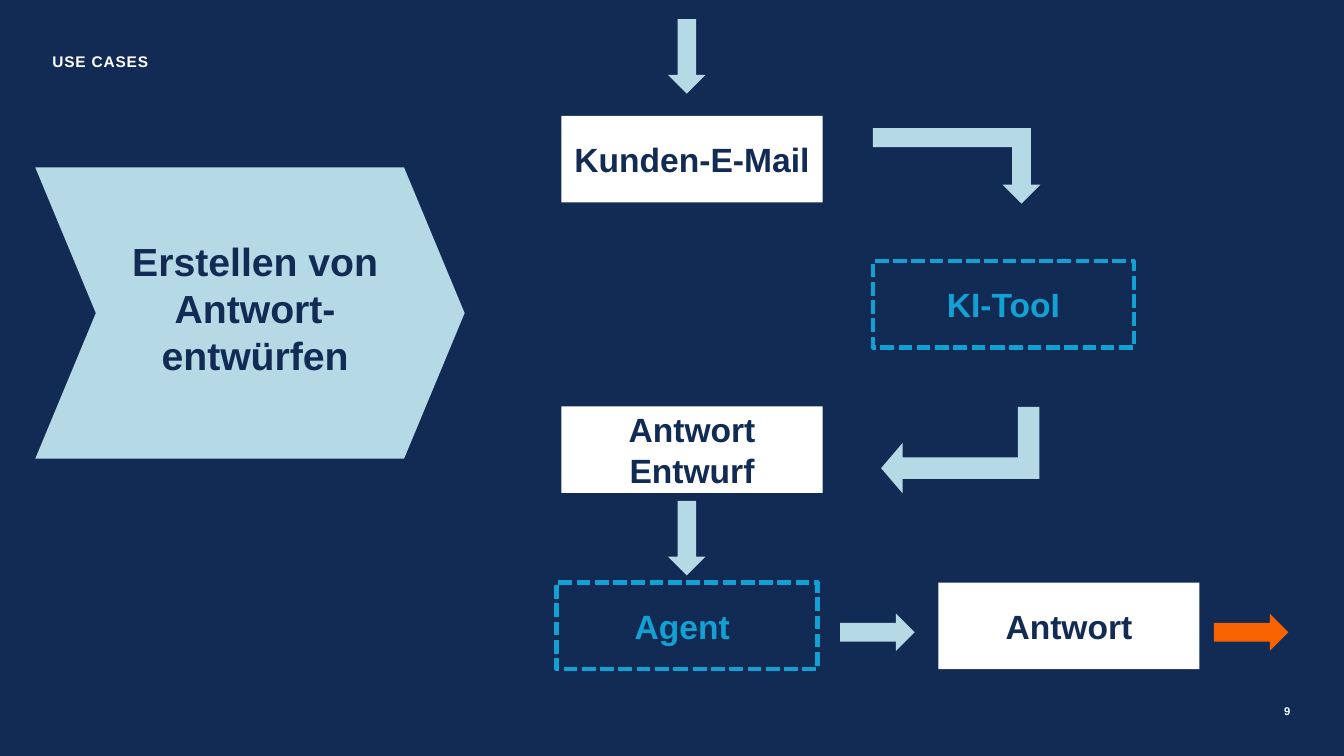
from dataclasses import dataclass

from pptx import Presentation
from pptx.dml.color import RGBColor
from pptx.enum.dml import MSO_LINE
from pptx.enum.shapes import MSO_SHAPE
from pptx.enum.text import MSO_ANCHOR, PP_ALIGN
from pptx.oxml.ns import qn
from pptx.util import Cm, Pt

CHEVRON, RECTANGLE = MSO_SHAPE.CHEVRON, MSO_SHAPE.RECTANGLE
DOWN_ARROW, BENT_ARROW = MSO_SHAPE.DOWN_ARROW, MSO_SHAPE.BENT_UP_ARROW
MIDDLE, TOP = MSO_ANCHOR.MIDDLE, MSO_ANCHOR.TOP
LEFT, CENTER, RIGHT = PP_ALIGN.LEFT, PP_ALIGN.CENTER, PP_ALIGN.RIGHT
DASHED = MSO_LINE.SQUARE_DOT


@dataclass(frozen=True)
class Theme:
    """Colours, font and type sizes of the slide."""
    navy: RGBColor = RGBColor(0x12, 0x2B, 0x54)
    white: RGBColor = RGBColor(0xFF, 0xFF, 0xFF)
    pale: RGBColor = RGBColor(0xB5, 0xDA, 0xE6)
    cyan: RGBColor = RGBColor(0x13, 0xA0, 0xD3)
    orange: RGBColor = RGBColor(0xF8, 0x62, 0x00)
    font: str = "Arial"
    title: int = 28
    step: int = 24
    label: int = 11
    page: int = 8
    dash_width: float = 3.25


THEME = Theme()
STEP_WIDTH, STEP_HEIGHT = 6.58, 2.18
ARROW_WIDTH, ARROW_HEIGHT = 0.94, 1.88


def write(shape, wording, size, color, align=CENTER, anchor=MIDDLE, insets=None):
    """Fill a shape with one bold paragraph and return that paragraph."""
    frame = shape.text_frame
    frame.word_wrap = True
    frame.vertical_anchor = anchor
    if insets:
        (frame.margin_left, frame.margin_top,
         frame.margin_right, frame.margin_bottom) = map(Cm, insets)
    frame.text = wording
    paragraph = frame.paragraphs[0]
    paragraph.alignment = align
    font = paragraph.runs[0].font
    font.name, font.size, font.bold = THEME.font, Pt(size), True
    font.color.rgb = color
    return paragraph


def add_preset(slide, preset, box, fill=None):
    """Add a flat preset shape without an outline."""
    shape = slide.shapes.add_shape(preset, *map(Cm, box))
    shape.shadow.inherit = False
    shape.line.fill.background()
    if fill is None:
        shape.fill.background()
    else:
        shape.fill.solid()
        shape.fill.fore_color.rgb = fill
    return shape


def add_step(slide, left, top, wording, actor=False):
    """Add a process step: white for a document, dashed for an actor."""
    box = left, top, STEP_WIDTH, STEP_HEIGHT
    step = add_preset(slide, RECTANGLE, box, None if actor else THEME.white)
    if actor:
        step.line.color.rgb = THEME.cyan
        step.line.width = Pt(THEME.dash_width)
        step.line.dash_style = DASHED
    write(step, wording, THEME.step, THEME.cyan if actor else THEME.navy)


def add_arrow(slide, left, top, rotation=0, color=THEME.pale):
    """Add a straight arrow that points down before its rotation."""
    arrow = add_preset(slide, DOWN_ARROW, (left, top, ARROW_WIDTH, ARROW_HEIGHT), color)
    arrow.rotation = rotation


def add_bent_arrow(slide, box, rotation, head=0.25):
    """Add a mirrored, turned corner arrow."""
    arrow = add_preset(slide, BENT_ARROW, box, THEME.pale)
    arrow.adjustments[1] = head
    arrow.rotation = rotation
    arrow._element.spPr.find(qn("a:xfrm")).set("flipH", "1")


def add_section_label(slide, left, top, width, height):
    """Add the spaced section label."""
    label = slide.shapes.add_textbox(*map(Cm, (left, top, width, height)))
    paragraph = write(label, "USE CASES", THEME.label, THEME.white, LEFT, TOP, (0, 0, 0, 0))
    paragraph.runs[0].font._element.set("spc", "60")


def add_page_number(slide, left, top, width, height):
    """Add the page number."""
    number = slide.shapes.add_textbox(*map(Cm, (left, top, width, height)))
    paragraph = write(number, "9", THEME.page, THEME.white, RIGHT, insets=(0, 0, 0, 0))
    paragraph.line_spacing = Pt(10)


def add_use_case(slide, left, top, width, height):
    """Add the chevron that names the use case."""
    use_case = add_preset(slide, CHEVRON, (left, top, width, height), THEME.pale)
    use_case.adjustments[0] = 0.208
    write(use_case, "Erstellen von Antwort-entwürfen", THEME.title, THEME.navy,
          insets=(0.51, 0, 0.25, 0.25))


def add_mail_flow(slide, left, top, width, height):
    """Add the path from customer mail to reply inside the given box."""
    column = left + 0.13
    tool_left = left + 7.98
    last_row = top + height - STEP_HEIGHT
    down_left = column + (STEP_WIDTH - ARROW_WIDTH) / 2 - 0.13
    side_top = last_row + 0.31

    add_step(slide, column, top + 2.44, "Kunden-E-Mail")
    add_step(slide, tool_left, top + 6.1, "KI-TooI", actor=True)
    add_step(slide, column, top + 9.76, "Antwort Entwurf")
    add_step(slide, left, last_row, "Agent ", actor=True)
    add_step(slide, left + 9.63, last_row, "Antwort")

    for arrow_top in (top, top + 12.14):
        add_arrow(slide, down_left, arrow_top)
    add_arrow(slide, left + 7.62, side_top, 270)
    add_arrow(slide, left + width - (ARROW_WIDTH + ARROW_HEIGHT) / 2, side_top,
              270, THEME.orange)
    add_bent_arrow(slide, (tool_left, top + 2.75, 4.22, 1.9), 180)
    add_bent_arrow(slide, (tool_left + 1.11, top + 8.87, 2.18, 3.99), 270, 0.292)


def main():
    """Build and save the slide."""
    deck = Presentation()
    deck.slide_width, deck.slide_height = Cm(33.87), Cm(19.05)
    slide = deck.slides.add_slide(deck.slide_layouts[6])
    slide.background.fill.solid()
    slide.background.fill.fore_color.rgb = THEME.navy
    add_section_label(slide, 1.32, 1.32, 25.91, 0.71)
    add_page_number(slide, 31.78, 17.7, 0.74, 0.41)
    add_use_case(slide, 0.89, 4.22, 10.82, 7.34)
    add_mail_flow(slide, 14.02, 0.48, 18.45, 16.38)
    deck.save("out.pptx")


if __name__ == "__main__":
    main()
